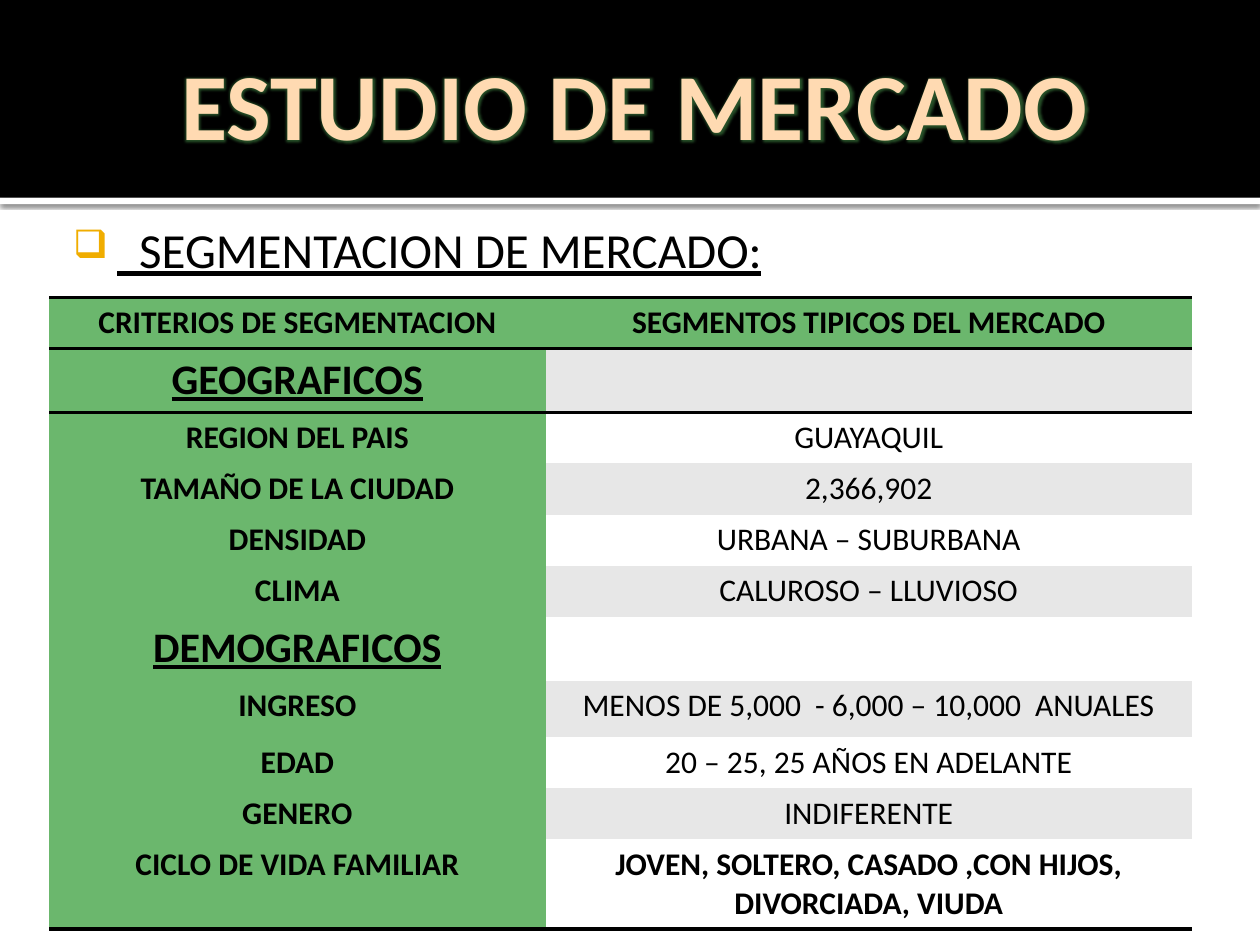
from lxml.etree import SubElement
from pptx import Presentation
from pptx.dml.color import RGBColor
from pptx.enum.shapes import MSO_SHAPE
from pptx.enum.text import MSO_ANCHOR, PP_ALIGN
from pptx.oxml import parse_xml
from pptx.oxml.ns import nsdecls, qn
from pptx.util import Inches, Pt

TITLE = "ESTUDIO DE MERCADO"
SUBTITLE = "  SEGMENTACION DE MERCADO:"
# criterion, typical segment, row height
ROWS = [
    ("CRITERIOS DE SEGMENTACION", "SEGMENTOS TIPICOS DEL MERCADO", 0.4),
    ("GEOGRAFICOS", "", 0.5),
    ("REGION DEL PAIS", "GUAYAQUIL", 0.4),
    ("TAMAÑO DE LA CIUDAD", "2,366,902", 0.4),
    ("DENSIDAD", "URBANA – SUBURBANA", 0.4),
    ("CLIMA", "CALUROSO – LLUVIOSO", 0.4),
    ("DEMOGRAFICOS", "", 0.5),
    ("INGRESO", "MENOS DE 5,000  - 6,000 – 10,000  ANUALES", 0.45),
    ("EDAD", "20 – 25, 25 AÑOS EN ADELANTE", 0.4),
    ("GENERO", "INDIFERENTE", 0.4),
    ("CICLO DE VIDA FAMILIAR", "JOVEN, SOLTERO, CASADO ,CON HIJOS, DIVORCIADA, VIUDA", 0.69),
]
COL_WIDTHS = (3.94, 5.13)
THEME = {
    "font": "Calibri", "title_size": 54, "subtitle_size": 28, "group_size": 24, "cell_size": 18,
    "ink": "000000", "paper": "FFFFFF", "title": "FFDAB2", "glow": "479249",
    "bullet": "F0AD00", "green": "6BB76D", "band": "E7E7E7",
}
NO_STYLE = "{2D5ABB26-0587-4C30-8999-92F81FD0307C}"


def rgb(name):
    return RGBColor.from_string(THEME[name])


def style(p, size, color="ink", bold=False, underline=False):
    font = p.font
    font.name, font.size = THEME["font"], Pt(THEME[size])
    font.bold, font.underline = bold, underline
    font.color.rgb = rgb(color)


def add_band(slide, index, top, height, color):
    """Full-width rectangle placed behind the title."""
    s = slide.shapes.add_shape(MSO_SHAPE.RECTANGLE, 0, Inches(top), Inches(10), Inches(height))
    s.shadow.inherit = False
    s.fill.solid()
    s.fill.fore_color.rgb = rgb(color)
    s.line.fill.background()
    slide.shapes._spTree.insert(2 + index, s._element)
    return s


def add_header(slide):
    rule = add_band(slide, 0, 1.57, 0.05, "paper")
    add_band(slide, 1, 0, 1.57, "ink")
    effects = rule._element.spPr.find(qn("a:effectLst"))
    effects.append(parse_xml(
        f'<a:outerShdw {nsdecls("a")} blurRad="{Pt(2.5)}" dist="{Pt(0.8)}" dir="5400000">'
        f'<a:srgbClr val="{THEME["ink"]}"><a:alpha val="60000"/></a:srgbClr></a:outerShdw>'))

    title = slide.shapes.title
    title.left, title.top, title.width, title.height = map(Inches, (0.62, 0.31, 8.83, 1.01))
    tf = title.text_frame
    tf.vertical_anchor = MSO_ANCHOR.MIDDLE
    p = tf.paragraphs[0]
    p.alignment = PP_ALIGN.CENTER
    r = p.add_run()
    r.text = TITLE
    style(p, "title_size", "title", bold=True)
    r.font.color.rgb = rgb("title")
    r._r.get_or_add_rPr().append(parse_xml(
        f'<a:effectLst {nsdecls("a")}><a:glow rad="{Pt(4.5)}"><a:srgbClr val="{THEME["glow"]}">'
        '<a:alpha val="55000"/></a:srgbClr></a:glow></a:effectLst>'))


def add_subtitle(slide):
    tf = slide.shapes.add_textbox(*map(Inches, (0.39, 1.64, 9, 0.62))).text_frame
    tf.word_wrap = True
    tf.margin_left, tf.margin_top = Inches(0.06), Inches(0.1)
    p = tf.paragraphs[0]
    p.add_run().text = SUBTITLE
    style(p, "subtitle_size", underline=True)
    pPr = p._p.get_or_add_pPr()
    pPr.set("marL", str(Inches(0.48)))
    pPr.set("indent", str(Inches(-0.35)))
    bullet = (f'<a:buClr {nsdecls("a")}><a:srgbClr val="{THEME["bullet"]}"/></a:buClr>',
              f'<a:buSzPct {nsdecls("a")} val="80000"/>',
              f'<a:buChar {nsdecls("a")} char="❑"/>')
    for i, xml in enumerate(bullet):
        pPr.insert(i, parse_xml(xml))


def set_borders(cell, *sides):
    tcPr = cell._tc.get_or_add_tcPr()
    for i, side in enumerate(sides):
        tcPr.insert(i, parse_xml(
            f'<a:{side} {nsdecls("a")} w="{Pt(2)}"><a:solidFill>'
            f'<a:srgbClr val="{THEME["ink"]}"/></a:solidFill></a:{side}>'))


def add_segment_table(slide):
    total = sum(height for _, _, height in ROWS)
    frame = slide.shapes.add_table(len(ROWS), 2, Inches(0.39), Inches(2.36),
                                   Inches(sum(COL_WIDTHS)), Inches(total))
    table = frame.table
    table.horz_banding = False
    table._tbl.tblPr.find(qn("a:tableStyleId")).text = NO_STYLE
    for column, width in zip(table.columns, COL_WIDTHS):
        column.width = Inches(width)
    last = len(ROWS) - 1
    for i, (criterion, segment, height) in enumerate(ROWS):
        table.rows[i].height = Inches(height)
        is_group = not segment
        for j, text in enumerate((criterion, segment)):
            cell = table.cell(i, j)
            p = cell.text_frame.paragraphs[0]
            p.alignment = PP_ALIGN.CENTER
            if text:
                p.add_run().text = text
            style(p, "group_size" if is_group else "cell_size",
                  bold=j == 0 or i in (0, last), underline=is_group)
            cell.fill.solid()
            cell.fill.fore_color.rgb = rgb(
                "green" if j == 0 or i == 0 else "band" if i % 2 else "paper")
            if i == 0:
                set_borders(cell, "lnT", "lnB")
            elif i == 1:
                set_borders(cell, "lnT")
            elif i == last:
                set_borders(cell, "lnB")


def main():
    prs = Presentation()
    prs.slide_width, prs.slide_height = Inches(10), Inches(7.5)
    slide = prs.slides.add_slide(prs.slide_layouts[5])
    add_header(slide)
    add_segment_table(slide)
    add_subtitle(slide)
    prs.save("out.pptx")


if __name__ == "__main__":
    main()
